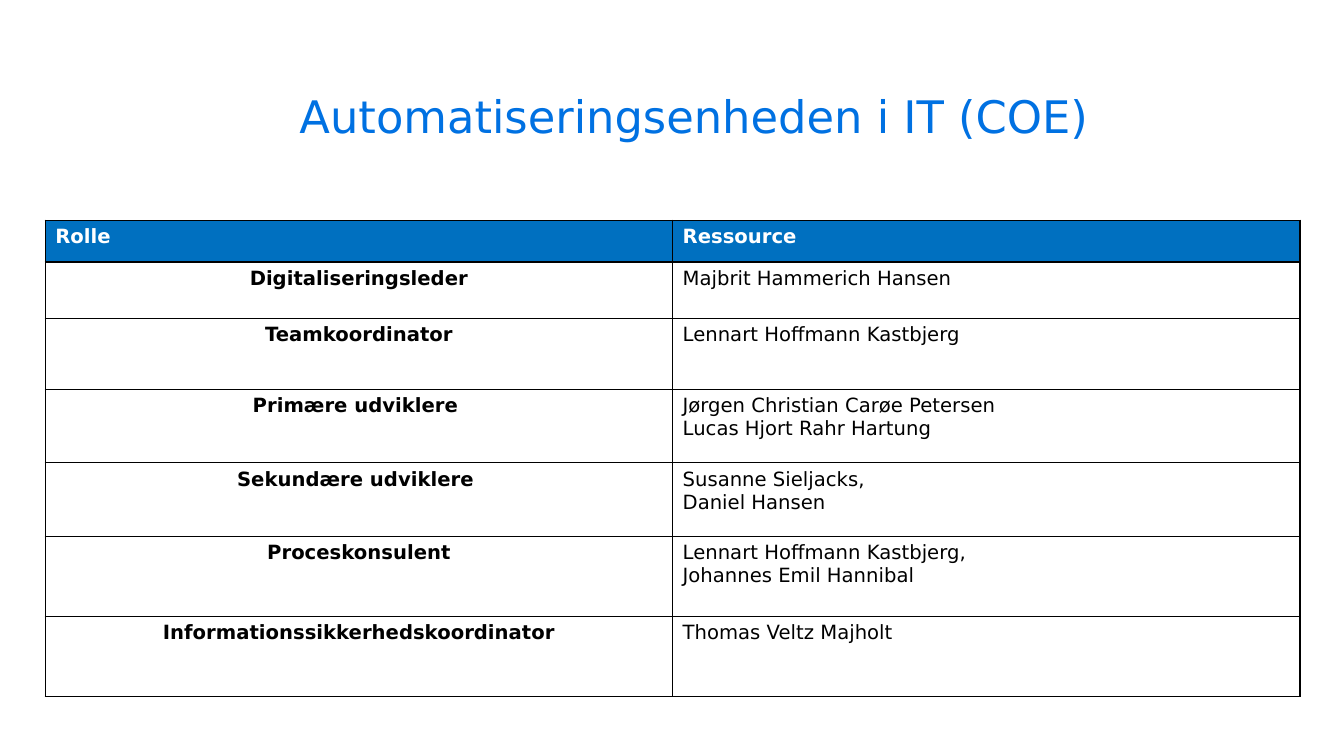
from lxml import etree
from pptx import Presentation
from pptx.dml.color import RGBColor
from pptx.enum.text import MSO_ANCHOR, PP_ALIGN
from pptx.oxml.ns import qn
from pptx.util import Cm, Pt

CENTER, LEFT = PP_ALIGN.CENTER, PP_ALIGN.LEFT
MIDDLE = MSO_ANCHOR.MIDDLE

# Content: role, resource (\n = new paragraph, \v = line break), row height in cm
HEADING = "Automatiseringsenheden i IT (COE)"
ROLES = [
    ("Rolle", "Ressource", 1.05),
    ("Digitaliseringsleder", "Majbrit Hammerich Hansen", 1.42),
    ("Teamkoordinator", "Lennart Hoffmann Kastbjerg", 1.79),
    ("Primære udviklere ", "Jørgen Christian Carøe Petersen\vLucas Hjort Rahr Hartung", 1.85),
    ("Sekundære udviklere ", "Susanne Sieljacks,\nDaniel Hansen", 1.85),
    ("Proceskonsulent", "Lennart Hoffmann Kastbjerg,\nJohannes Emil Hannibal", 2.02),
    ("Informationssikkerhedskoordinator", "Thomas Veltz Majholt", 2.02),
]

# Style
FONT = "DejaVu Sans"
HEADING_BLUE = RGBColor(0x00, 0x71, 0xE2)
HEADER_BLUE = RGBColor(0x00, 0x70, 0xC0)
WHITE = RGBColor(0xFF, 0xFF, 0xFF)
BLACK = RGBColor(0x00, 0x00, 0x00)
BORDER_WIDTH = Pt(1)
COLUMN_WIDTH = 15.81


def style_text(frame, size, color, bold, align):
    for paragraph in frame.paragraphs:
        paragraph.alignment = align
        for run in paragraph.runs:
            run.font.name = FONT
            run.font.size = Pt(size)
            run.font.color.rgb = color
            run.font.bold = bold


def add_borders(cell):
    properties = cell._tc.get_or_add_tcPr()
    for index, side in enumerate(("a:lnL", "a:lnR", "a:lnT", "a:lnB")):
        line = etree.Element(qn(side), w=str(BORDER_WIDTH))
        fill = etree.SubElement(line, qn("a:solidFill"))
        etree.SubElement(fill, qn("a:srgbClr"), val=str(BLACK))
        properties.insert(index, line)


# Slide
prs = Presentation()
prs.slide_width, prs.slide_height = Cm(33.87), Cm(19.05)
slide = prs.slides.add_slide(prs.slide_layouts[6])

# Heading
heading = slide.shapes.add_textbox(Cm(2.26), Cm(1.32), Cm(30.48), Cm(3.18)).text_frame
heading.word_wrap = True
heading.vertical_anchor = MIDDLE
heading.text = HEADING
style_text(heading, 32, HEADING_BLUE, False, CENTER)

# Table of roles
total_height = sum(height for _, _, height in ROLES)
roles = slide.shapes.add_table(
    len(ROLES), 2, Cm(1.14), Cm(5.55), Cm(2 * COLUMN_WIDTH), Cm(total_height)
).table
roles.horz_banding = False

for row, (role, resource, height) in enumerate(ROLES):
    roles.rows[row].height = Cm(height)
    is_header = row == 0
    for column, text in enumerate((role, resource)):
        is_role = column == 0
        cell = roles.cell(row, column)
        cell.text_frame.text = text
        cell.fill.solid()
        cell.fill.fore_color.rgb = HEADER_BLUE if is_header else WHITE
        style_text(
            cell.text_frame,
            14,
            WHITE if is_header else BLACK,
            is_header or is_role,
            CENTER if is_role and not is_header else LEFT,
        )
        add_borders(cell)

prs.save("out.pptx")
